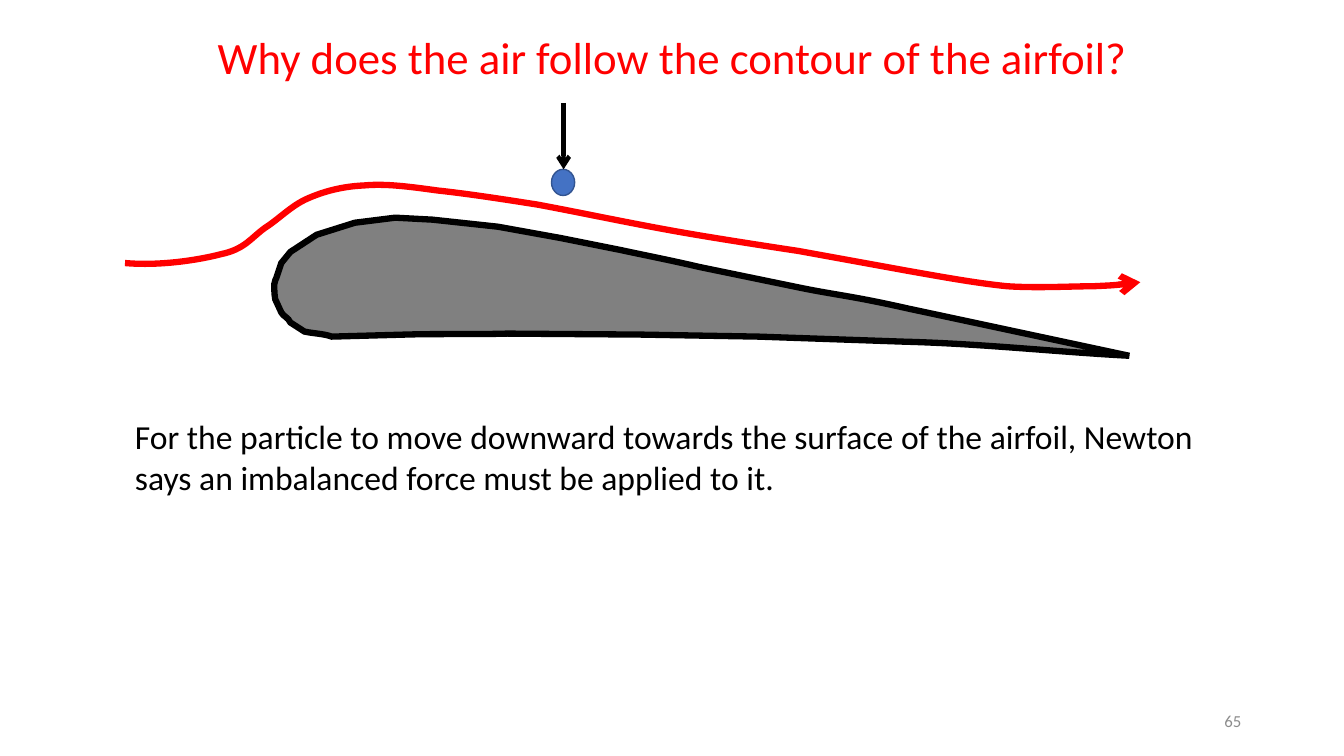
from dataclasses import dataclass

from lxml.etree import SubElement
from pptx import Presentation
from pptx.dml.color import RGBColor
from pptx.dml.line import LineFormat
from pptx.enum.shapes import MSO_CONNECTOR, MSO_SHAPE
from pptx.enum.text import MSO_ANCHOR, PP_ALIGN
from pptx.oxml.ns import qn
from pptx.shapes.autoshape import Shape
from pptx.slide import Slide
from pptx.util import Emu, Pt

PX = 9144
Point = tuple[int, int]
Segment = tuple[Point, ...]


@dataclass(frozen=True)
class Label:
    text: str
    x: int
    y: int
    w: int
    h: int
    size: int
    color: str
    align: PP_ALIGN = PP_ALIGN.LEFT
    anchor: MSO_ANCHOR = MSO_ANCHOR.TOP


@dataclass(frozen=True)
class Outline:
    start: Point
    segments: tuple[Segment, ...]
    color: str
    fill: str | None = None
    arrow: bool = False


LABELS = [
    Label("Why does the air follow the contour of the airfoil?",
          170, 25, 994, 64, 32, "FF0000", PP_ALIGN.CENTER),
    Label("For the particle to move downward towards the surface of the airfoil, "
          "Newton says an imbalanced force must be applied to it.",
          124, 408, 1094, 91, 24, "000000"),
    Label("65", 941, 695, 300, 40, 12, "8C8C8C", PP_ALIGN.RIGHT, MSO_ANCHOR.MIDDLE),
]

AIRFOIL = Outline((273, 297), (
    ((272, 292), (272, 286), (272, 282)),
    ((272, 279), (274, 277), (275, 273)),
    ((279, 261),), ((288, 250),), ((314, 233),), ((352, 221),), ((392, 216),),
    ((429, 218),), ((494, 225),), ((555, 236),), ((615, 248),),
    ((638, 253), (664, 258), (694, 265)),
    ((796, 286),),
    ((831, 293), (847, 294), (900, 306)),
    ((1120, 353),),
    ((1045, 349), (974, 341), (896, 339)),
    ((752, 334),), ((635, 332),), ((503, 331),),
    ((469, 332), (435, 331), (402, 332)),
    ((329, 334),),
    ((321, 331), (311, 331), (302, 329)),
    ((288, 320),),
    ((286, 315), (281, 314), (279, 310)),
    ((273, 297),),
), "000000", fill="808080")

AIRFLOW = Outline((124, 261), (
    ((159, 264), (197, 258), (220, 252)),
    ((243, 247), (249, 236), (263, 226)),
    ((277, 217), (289, 204), (305, 197)),
    ((321, 190), (339, 185), (361, 184)),
    ((382, 182), (405, 185), (434, 189)),
    ((462, 192), (495, 197), (533, 203)),
    ((571, 210), (618, 220), (662, 228)),
    ((705, 236), (792, 249), (792, 249)),
    ((902, 269),),
    ((936, 275), (969, 281), (999, 284)),
    ((1029, 286), (1062, 284), (1084, 284)),
    ((1106, 283), (1119, 282), (1131, 280)),
), "FF0000", arrow=True)


def px(n: int) -> Emu:
    return Emu(n * PX)


def rgb(color: str) -> RGBColor:
    return RGBColor.from_string(color)


def style_line(line: LineFormat, color: str, width: float, arrow: bool = False) -> None:
    line.color.rgb = rgb(color)
    line.width = Pt(width)
    ln = line._get_or_add_ln()
    SubElement(ln, qn("a:miter"), lim="800000")
    if arrow:
        SubElement(ln, qn("a:tailEnd"), type="arrow")


def bend(sp: Shape, segments: tuple[Segment, ...]) -> None:
    steps = list(sp._element.iter(qn("a:lnTo")))
    for step, segment in zip(steps, segments):
        if len(segment) == 3:
            curve = step.getparent().makeelement(qn("a:cubicBezTo"))
            for x, y in segment:
                SubElement(curve, qn("a:pt"), x=str(px(x) - sp.left), y=str(px(y) - sp.top))
            step.getparent().replace(step, curve)


def add_outline(s: Slide, outline: Outline) -> None:
    x, y = outline.start
    builder = s.shapes.build_freeform(px(x), px(y))
    ends = [(px(segment[-1][0]), px(segment[-1][1])) for segment in outline.segments]
    builder.add_line_segments(ends, close=False)
    sp = builder.convert_to_shape()
    bend(sp, outline.segments)
    sp.shadow.inherit = False
    if outline.fill:
        SubElement(next(sp._element.iter(qn("a:path"))), qn("a:close"))
        sp.fill.solid()
        sp.fill.fore_color.rgb = rgb(outline.fill)
    else:
        sp.fill.background()
    style_line(sp.line, outline.color, 4.5, outline.arrow)


def add_particle(s: Slide) -> None:
    sp = s.shapes.add_shape(MSO_SHAPE.OVAL, px(547), px(168), px(23), px(26))
    sp.shadow.inherit = False
    sp.fill.solid()
    sp.fill.fore_color.rgb = rgb("4472C4")
    style_line(sp.line, "325491", 1)


def add_force(s: Slide) -> None:
    cxn = s.shapes.add_connector(MSO_CONNECTOR.STRAIGHT, px(559), px(102), px(559), px(168))
    style_line(cxn.line, "000000", 3, arrow=True)
    SubElement(cxn._element.spPr, qn("a:effectLst"))


def add_label(s: Slide, label: Label) -> None:
    tf = s.shapes.add_textbox(px(label.x), px(label.y), px(label.w), px(label.h)).text_frame
    tf.word_wrap = True
    tf.vertical_anchor = label.anchor
    p = tf.paragraphs[0]
    p.text = label.text
    p.alignment = label.align
    p.font.name = "Calibri"
    p.font.size = Pt(label.size)
    p.font.color.rgb = rgb(label.color)


def main() -> None:
    prs = Presentation()
    prs.slide_width, prs.slide_height = px(1333), px(750)
    s = prs.slides.add_slide(prs.slide_layouts[6])
    for outline in (AIRFOIL, AIRFLOW):
        add_outline(s, outline)
    add_particle(s)
    add_force(s)
    for label in LABELS:
        add_label(s, label)
    prs.save("out.pptx")


if __name__ == "__main__":
    main()
